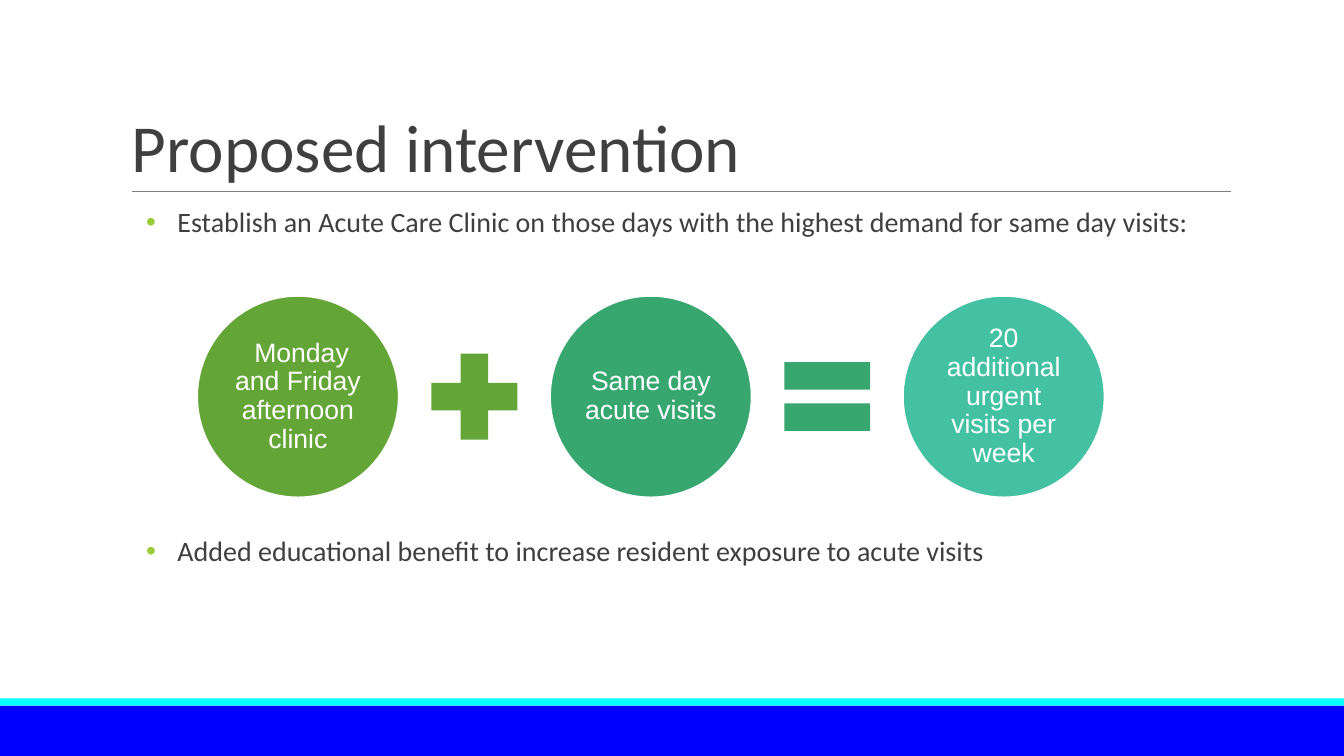
from lxml import etree
from pptx import Presentation
from pptx.dml.color import RGBColor
from pptx.enum import shapes, text
from pptx.oxml import ns
from pptx.util import Inches, Pt

WHITE = RGBColor(0xFF, 0xFF, 0xFF)
INK = RGBColor(0x3F, 0x3F, 0x3F)
GRAY = RGBColor(0x7F, 0x7F, 0x7F)
BLUE = RGBColor(0x00, 0x00, 0xFF)
CYAN = RGBColor(0x00, 0xFF, 0xFF)
LIME = RGBColor(0x99, 0xCB, 0x38)
LEAF = RGBColor(0x63, 0xA5, 0x37)
GREEN = RGBColor(0x37, 0xA7, 0x6F)
TEAL = RGBColor(0x44, 0xC1, 0xA3)

KIND = shapes.MSO_SHAPE
ALIGN = text.PP_ALIGN
ANCHOR = text.MSO_ANCHOR


def add_part(slide, kind, x, y, w, h, fill, edge=None):
    part = slide.shapes.add_shape(kind, Inches(x), Inches(y), Inches(w), Inches(h))
    part.shadow.inherit = False
    part.fill.solid()
    part.fill.fore_color.rgb = fill
    if edge is None:
        part.line.fill.background()
    else:
        part.line.color.rgb = edge
        part.line.width = Pt(2)
    return part


def add_dot(para):
    props = para._p.get_or_add_pPr()
    props.set("marL", str(Inches(0.56)))
    props.set("indent", str(Inches(-0.31)))
    tint = etree.SubElement(props, ns.qn("a:buClr"))
    etree.SubElement(tint, ns.qn("a:srgbClr")).set("val", str(LIME))
    etree.SubElement(props, ns.qn("a:buFont")).set("typeface", "Arial")
    etree.SubElement(props, ns.qn("a:buChar")).set("char", "•")


def write(shape, words, size, font="Calibri", color=INK, align=ALIGN.LEFT,
          anchor=ANCHOR.TOP, inset=(0.1, 0.05), lead=0.9, bullet=False):
    frame = shape.text_frame
    frame.word_wrap = True
    frame.vertical_anchor = anchor
    frame.margin_left = frame.margin_right = Inches(inset[0])
    frame.margin_top = frame.margin_bottom = Inches(inset[1])
    para = frame.paragraphs[0]
    para.alignment = align
    para.line_spacing = lead
    if bullet:
        add_dot(para)
    run = para.add_run()
    run.text = words
    run.font.size = Pt(size)
    run.font.name = font
    run.font.color.rgb = color


def add_box(slide, x, y, w, h, words, size, **style):
    box = slide.shapes.add_textbox(Inches(x), Inches(y), Inches(w), Inches(h))
    write(box, words, size, **style)


def add_footer(slide, x, y, w, h):
    strip = 0.07
    add_part(slide, KIND.RECTANGLE, x, y + strip, w, h - strip, BLUE)
    add_part(slide, KIND.RECTANGLE, x, y, w, strip, CYAN)


def add_title(slide, x, y, w, h, title):
    base = Inches(y + h)
    rule = slide.shapes.add_connector(
        shapes.MSO_CONNECTOR.STRAIGHT, Inches(x + 0.1), base, Inches(x + w), base)
    rule.line.color.rgb = GRAY
    rule.line.width = Pt(0.75)
    etree.SubElement(rule._element.spPr, ns.qn("a:effectLst"))
    add_box(slide, x, y, w, h, title, 48, anchor=ANCHOR.BOTTOM, lead=0.85)


def add_points(slide, x, y, w, h, points):
    """Set one bullet at the top of the box and the last at its foot."""
    tall = 0.42
    step = (h - tall) / (len(points) - 1)
    for i, point in enumerate(points):
        add_box(slide, x, y + i * step, w, tall, point, 20, inset=(0, 0.05), bullet=True)


def add_sum(slide, x, y, w, h, terms):
    """Spread circles over the box, each followed by its sign in the gap."""
    step = (w - h) / (len(terms) - 1)
    sign = 1.16
    for i, (label, color, mark) in enumerate(terms):
        left = x + i * step
        disc = add_part(slide, KIND.OVAL, left, y, h, h, color, WHITE)
        write(disc, label, 19, font="Arial", color=WHITE, align=ALIGN.CENTER,
              anchor=ANCHOR.MIDDLE, inset=(0.03, 0))
        if mark is not None:
            add_part(slide, mark, left + (h + step - sign) / 2, y + (h - sign) / 2,
                     sign, sign, color)


def main():
    deck = Presentation()
    deck.slide_width, deck.slide_height = Inches(13.33), Inches(7.5)
    slide = deck.slides.add_slide(deck.slide_layouts[6])

    # Frame and heading
    add_footer(slide, 0, 6.93, 13.33, 0.57)
    add_title(slide, 1.21, 0.31, 11, 1.59, "Proposed intervention")

    # Bullets above and below the diagram
    add_points(slide, 1.2, 2.02, 11, 3.68, [
        "Establish an Acute Care Clinic on those days with the highest demand "
        "for same day visits:",
        "Added educational benefit to increase resident exposure to acute visits",
    ])

    # Diagram
    add_sum(slide, 1.95, 2.93, 9.01, 2.01, [
        (" Monday and Friday afternoon clinic", LEAF, KIND.MATH_PLUS),
        ("Same day acute visits", GREEN, KIND.MATH_EQUAL),
        ("20 additional urgent visits per week", TEAL, None),
    ])
    deck.save("out.pptx")


if __name__ == "__main__":
    main()
